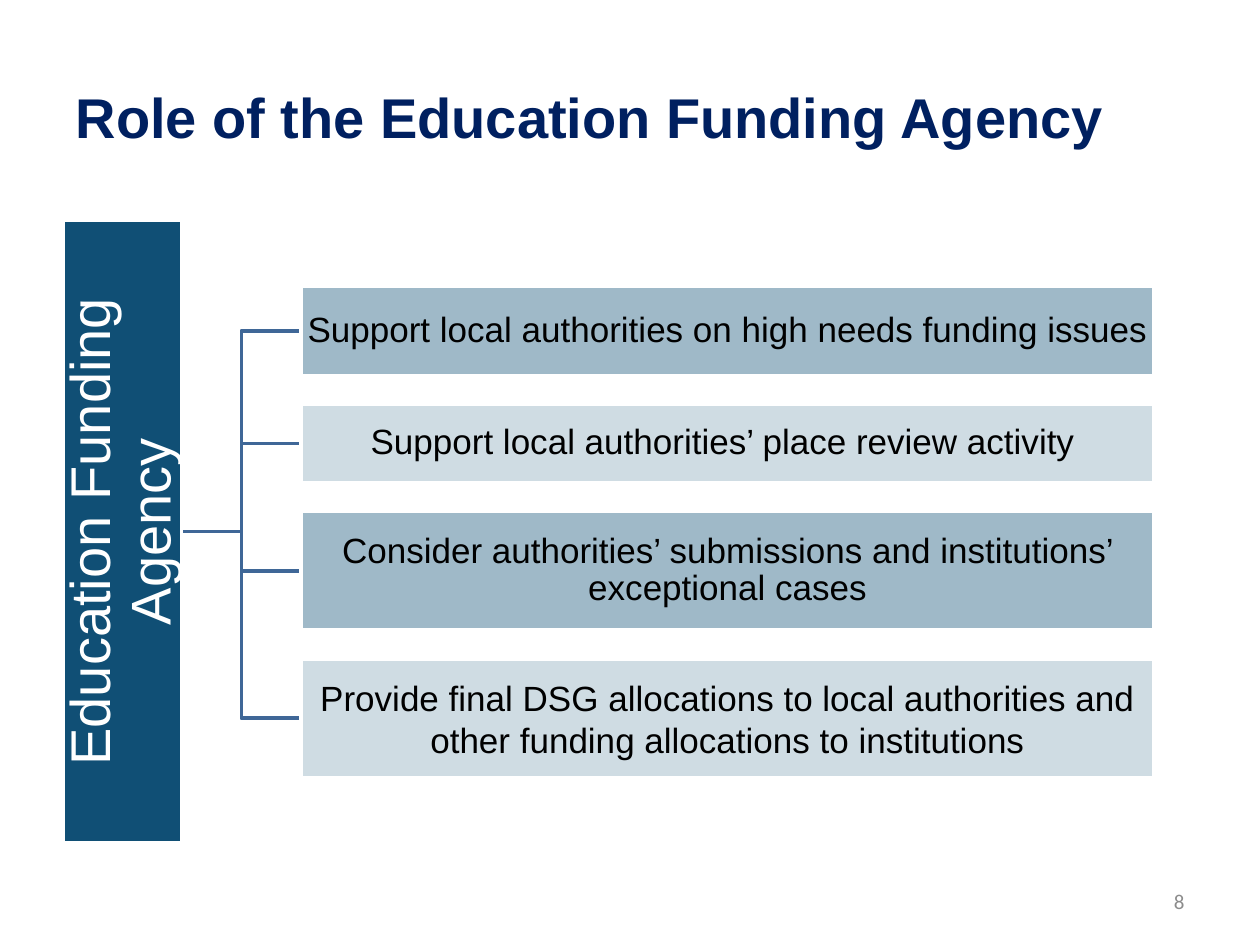
import pptx
import pptx.dml.color
import pptx.enum.shapes
import pptx.enum.text
import pptx.util

Inches = pptx.util.Inches
ALIGN = pptx.enum.text.PP_ALIGN
MIDDLE = pptx.enum.text.MSO_ANCHOR.MIDDLE

AGENCY_LENGTH, AGENCY_THICKNESS = 4.94, 0.94
AGENCY_CENTRE_X, AGENCY_CENTRE_Y = 0.97, 4.22
ROLE_LEFT, ROLE_TOP, ROLE_WIDTH, ROLE_GAP = 2.39, 2.27, 6.77, 0.23
ROLE_FILLS = ("9FB9C8", "CFDCE3")

# Wording, box height, line spacing
ROLES = [
    ("Support local authorities on high needs funding issues", 0.71, 0.9),
    ("Support local authorities’ place review activity ", 0.62, 0.9),
    ("Consider authorities’ submissions and institutions’ exceptional cases",
     0.94, 0.9),
    ("Provide final DSG allocations to local authorities and other funding "
     "allocations to institutions", 0.94, 1.0),
]


def rgb(value):
    return pptx.dml.color.RGBColor.from_string(value)


def apply(target, values):
    for name, value in values.items():
        setattr(target, name, value)


def write(shape, wording, size, color, align, inset=None, spacing=None,
          font="Arial", bold=False):
    frame = shape.text_frame
    apply(frame, {"word_wrap": True, "vertical_anchor": MIDDLE,
                  "auto_size": pptx.enum.text.MSO_AUTO_SIZE.NONE})
    if inset is not None:
        sides = ("left", "right", "top", "bottom")
        apply(frame, {f"margin_{side}": Inches(inset) for side in sides})
    paragraph = frame.paragraphs[0]
    apply(paragraph, {"alignment": align, "line_spacing": spacing})
    run = paragraph.add_run()
    run.text = wording
    apply(run.font, {"name": font, "size": pptx.util.Pt(size), "bold": bold})
    run.font.color.rgb = rgb(color)


def outline(shape, color):
    shape.shadow.inherit = False
    shape.line.color.rgb = rgb(color)
    shape.line.width = pptx.util.Pt(2)


def add_box(slide, left, top, width, height, fill):
    box = slide.shapes.add_shape(
        pptx.enum.shapes.MSO_SHAPE.RECTANGLE,
        Inches(left), Inches(top), Inches(width), Inches(height))
    box.fill.solid()
    box.fill.fore_color.rgb = rgb(fill)
    outline(box, "FFFFFF")
    return box


def add_branch(slide, role_y):
    """Draw the elbow line from the agency to the middle of one role."""
    start_x = AGENCY_CENTRE_X + AGENCY_THICKNESS / 2
    bend_x = (start_x + ROLE_LEFT) / 2
    points = [(start_x, AGENCY_CENTRE_Y), (bend_x, AGENCY_CENTRE_Y),
              (bend_x, role_y), (ROLE_LEFT, role_y)]
    corners = [(Inches(x), Inches(y)) for x, y in points]
    builder = slide.shapes.build_freeform(*corners[0], scale=1.0)
    builder.add_line_segments(corners[1:], close=False)
    branch = builder.convert_to_shape()
    branch.fill.background()
    outline(branch, "3F6797")


def add_title(slide):
    title = slide.shapes.title
    apply(title, {"left": Inches(0.5), "top": Inches(0.3),
                  "width": Inches(9), "height": Inches(1.25)})
    write(title, "Role of the Education Funding Agency", 32, "002060",
          ALIGN.LEFT, bold=True)


def add_agency(slide):
    agency = add_box(slide, AGENCY_CENTRE_X - AGENCY_LENGTH / 2,
                     AGENCY_CENTRE_Y - AGENCY_THICKNESS / 2,
                     AGENCY_LENGTH, AGENCY_THICKNESS, "104F75")
    agency.rotation = 270
    write(agency, "Education Funding Agency", 32, "FFFFFF", ALIGN.CENTER,
          inset=0.02, spacing=0.9)


def add_roles(slide):
    top = ROLE_TOP
    for index, (wording, height, spacing) in enumerate(ROLES):
        add_branch(slide, top + height / 2)
        role = add_box(slide, ROLE_LEFT, top, ROLE_WIDTH, height,
                       ROLE_FILLS[index % 2])
        write(role, wording, 20, "000000", ALIGN.CENTER, inset=0.01,
              spacing=spacing)
        top += height + ROLE_GAP


def add_page_number(slide):
    number = slide.shapes.add_textbox(Inches(7.17), Inches(6.95),
                                      Inches(2.33), Inches(0.4))
    write(number, "8", 12, "8C8C8C", ALIGN.RIGHT, font="Calibri")


def main():
    deck = pptx.Presentation()
    apply(deck, {"slide_width": Inches(10), "slide_height": Inches(7.5)})
    slide = deck.slides.add_slide(deck.slide_layouts[5])  # title only
    add_title(slide)
    add_roles(slide)
    add_agency(slide)
    add_page_number(slide)
    deck.save("out.pptx")


if __name__ == "__main__":
    main()
